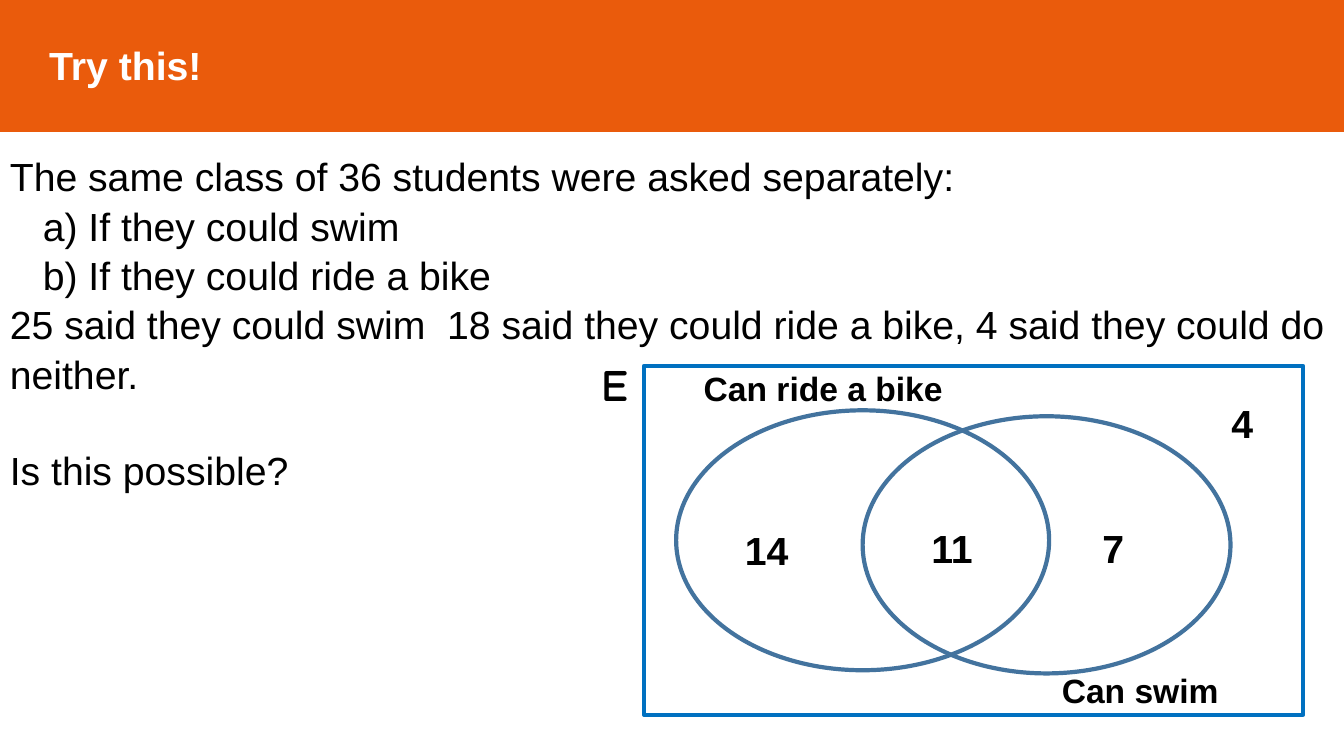
"""Build a slide with a Venn diagram question about swimming and cycling."""
from pptx import Presentation
from pptx.dml.color import RGBColor
from pptx.enum.shapes import MSO_SHAPE as SHAPE
from pptx.enum.text import MSO_ANCHOR as ANCHOR, PP_ALIGN as ALIGN
from pptx.util import Cm, Pt

TITLE = "Try this!"
LINE_PT = 33.6
QUESTION = [
    ("The same class of 36 students were asked separately:", 0, 0),
    ("a) If they could swim", 0.83, 0),
    ("b) If they could ride a bike", 0.83, 0),
    ("25 said they could swim  18 said they could ride a bike, "
     "4 said they could do neither.", 0, 0),
    ("Is this possible?", 0, LINE_PT),
]
OUTLINES = [
    (SHAPE.RECTANGLE, (16.23, 9.22, 16.61, 8.79), "0070C0"),
    (SHAPE.OVAL, (17.04, 10.34, 9.4, 6.55), "43739E"),
    (SHAPE.OVAL, (21.74, 10.49, 9.27, 6.48), "43739E"),
]
SET_NAMES = [
    ("Can ride a bike", (17.42, 9.14, 6.65, 1.27)),
    ("Can swim", (25.32, 16.76, 6.83, 1.27)),
]
COUNTS = [
    ("4", (30.78, 9.93, 1.35, 1.45)),
    ("11", (23.22, 13.08, 1.75, 1.45)),
    ("14", (18.52, 13.13, 1.75, 1.45)),
    ("7", (27.53, 13.08, 1.75, 1.45)),
]
UNIVERSE = ("E", (14.91, 8.86, 1.02, 1.63))


def rgb(value):
    return RGBColor.from_string(value)


def place(shape, box):
    shape.left, shape.top, shape.width, shape.height = map(Cm, box)


def style(p, size=28, bold=True, color="000000", font="Arial", align=ALIGN.LEFT):
    p.alignment = align
    for r in p.runs:
        r.font.size, r.font.bold, r.font.name = Pt(size), bold, font
        r.font.color.rgb = rgb(color)


def add_text(s, box, wrap=True):
    tf = s.shapes.add_textbox(*map(Cm, box)).text_frame
    tf.word_wrap = wrap
    return tf


def add_label(s, text, box, wrap=True, **look):
    tf = add_text(s, box, wrap)
    tf.text = text
    style(tf.paragraphs[0], **look)


def add_title(s):
    title = s.shapes.title
    place(title, (-0.03, -0.03, 33.91, 3.35))
    title.fill.solid()
    title.fill.fore_color.rgb = rgb("EA5B0C")
    title.line.color.rgb = rgb("EA5B0C")
    title.line.width = Pt(1)
    tf = title.text_frame
    tf.text = TITLE
    tf.vertical_anchor = ANCHOR.MIDDLE
    tf.margin_left = Cm(1.27)
    style(tf.paragraphs[0], color="FFFFFF")


def add_question(s):
    tf = add_text(s, (0, 3.66, 33.87, 8.64))
    tf.text = "\n".join(text for text, _, _ in QUESTION)
    for p, (_, indent, before) in zip(tf.paragraphs, QUESTION):
        style(p, bold=False)
        p.line_spacing = 1.05
        p.space_before = Pt(before)
        if indent:
            p._p.get_or_add_pPr().set("marL", str(Cm(indent)))


def add_venn(s):
    for kind, box, color in OUTLINES:
        sp = s.shapes.add_shape(kind, *map(Cm, box))
        sp.shadow.inherit = False
        sp.fill.background()
        sp.line.color.rgb = rgb(color)
        sp.line.width = Pt(3)
    for text, box in SET_NAMES:
        add_label(s, text, box, size=24, align=ALIGN.CENTER)
    for text, box in COUNTS:
        add_label(s, text, box)
    add_label(s, *UNIVERSE, wrap=False, size=32, font="Comic Neue")


def main():
    prs = Presentation()
    prs.slide_width, prs.slide_height = Cm(33.87), Cm(19.05)
    s = prs.slides.add_slide(prs.slide_layouts[5])
    add_title(s)
    add_question(s)
    add_venn(s)
    prs.save("out.pptx")


if __name__ == "__main__":
    main()
